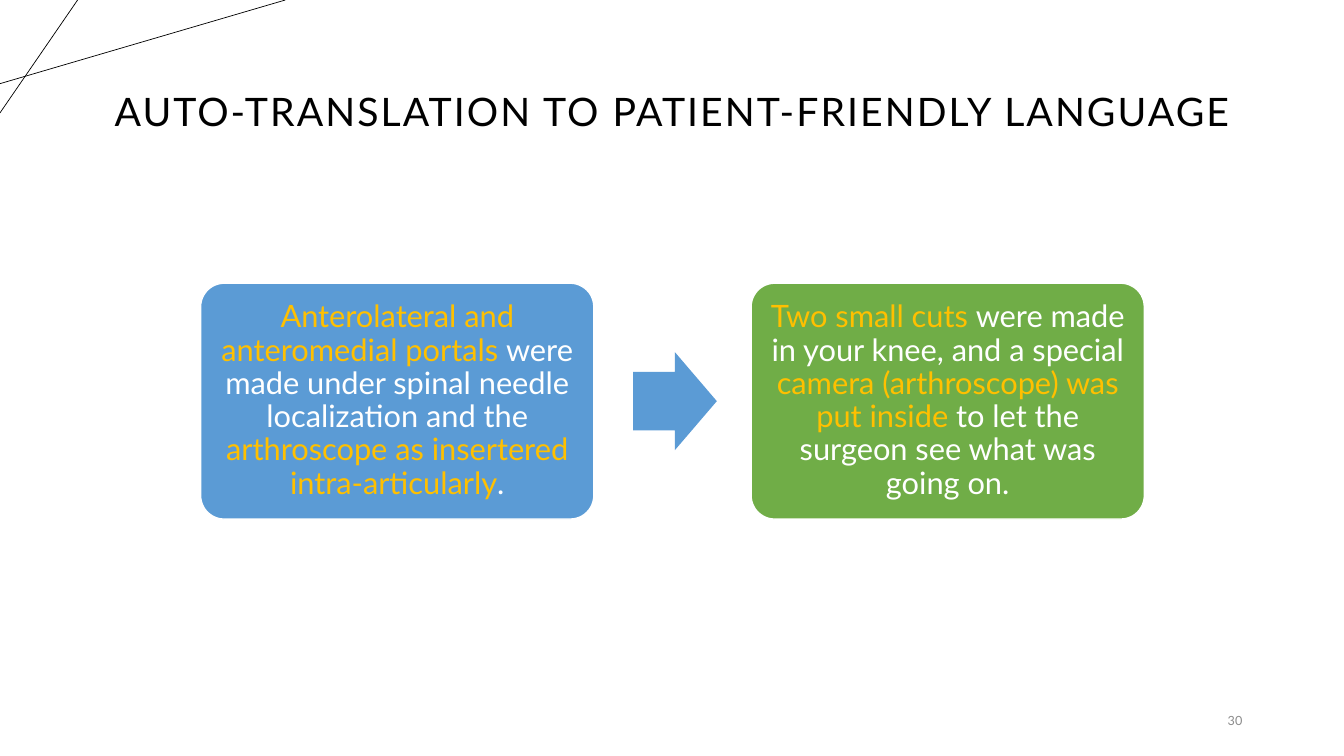
from lxml import etree
from pptx import Presentation
from pptx.dml.color import RGBColor
from pptx.enum.shapes import MSO_CONNECTOR, MSO_SHAPE
from pptx.enum.text import MSO_ANCHOR, PP_ALIGN
from pptx.oxml.ns import qn
from pptx.util import Inches, Pt

CENTER, RIGHT = PP_ALIGN.CENTER, PP_ALIGN.RIGHT
MIDDLE = MSO_ANCHOR.MIDDLE
ROUNDED, ARROW = MSO_SHAPE.ROUNDED_RECTANGLE, MSO_SHAPE.RIGHT_ARROW
STRAIGHT = MSO_CONNECTOR.STRAIGHT

BLACK, WHITE, GRAY = "000000", "FFFFFF", "8C8C8C"
BLUE, GREEN, GOLD = "5B9BD5", "70AD47", "FFC000"
FONT = "Lato"

TITLE = "AUTO-TRANSLATION TO PATIENT-FRIENDLY LANGUAGE"
SLIDE_NUMBER = "30"
CORNER_LINES = [((0, 0.83), (2.83, 0)), ((0.77, 0), (0, 1.12))]
CARDS = [
    (BLUE, [
        ("Anterolateral and anteromedial portals ", GOLD),
        ("were made under spinal needle localization and the ", WHITE),
        ("arthroscope as insertered intra-articularly", GOLD),
        (".", WHITE),
    ]),
    (GREEN, [
        ("Two small cuts ", GOLD),
        ("were made in your knee, and a special ", WHITE),
        ("camera (arthroscope) was put inside", GOLD),
        (" to let the surgeon see what was going on.", WHITE),
    ]),
]

CARD_LEFT, CARD_WIDTH, CARD_HEIGHT, CARD_STEP = 1.99, 3.9, 2.34, 5.46
ARROW_LEFT, ARROW_WIDTH, ARROW_HEIGHT = 6.28, 0.83, 0.97
ROW_MIDDLE = 3.98


def color(value):
    return RGBColor.from_string(value)


def set_all(target, values):
    for name, value in values.items():
        setattr(target, name, value)


def write(frame, spans, size, align, line_spacing=1.0, margins=(0.1, 0.05)):
    """Fill a text frame with one paragraph of coloured spans."""
    across, down = map(Inches, margins)
    set_all(frame, {"word_wrap": True, "vertical_anchor": MIDDLE,
                    "margin_left": across, "margin_right": across,
                    "margin_top": down, "margin_bottom": down})
    para = frame.paragraphs[0]
    set_all(para, {"alignment": align, "line_spacing": line_spacing})
    for text, text_color in spans:
        span = para.add_run()
        span.text = text
        set_all(span.font, {"name": FONT, "size": Pt(size)})
        span.font.color.rgb = color(text_color)
    return para


def add_block(slide, kind, left, width, height, fill, adjustments):
    """Add a flat filled shape centred on the row."""
    top = ROW_MIDDLE - height / 2
    block = slide.shapes.add_shape(
        kind, Inches(left), Inches(top), Inches(width), Inches(height))
    block.shadow.inherit = False
    block.fill.solid()
    block.fill.fore_color.rgb = color(fill)
    block.line.fill.background()
    for index, value in enumerate(adjustments):
        block.adjustments[index] = value
    return block


def main():
    deck = Presentation()
    set_all(deck, {"slide_width": Inches(13.33), "slide_height": Inches(7.5)})
    slide = deck.slides.add_slide(deck.slide_layouts[5])

    for start, end in CORNER_LINES:
        line = slide.shapes.add_connector(STRAIGHT, *map(Inches, start + end))
        line.line.color.rgb = color(BLACK)
        line.line.width = Pt(0.5)
        etree.SubElement(line._element.spPr, qn("a:effectLst"))

    title = slide.shapes.title
    set_all(title, {"left": Inches(0.92), "top": Inches(0.4),
                    "width": Inches(11.5), "height": Inches(1.45)})
    heading = write(title.text_frame, [(TITLE, BLACK)], 28, CENTER, 0.9)
    heading.runs[0].font._element.set("spc", "150")

    for index, (fill, spans) in enumerate(CARDS):
        card = add_block(slide, ROUNDED, CARD_LEFT + index * CARD_STEP,
                         CARD_WIDTH, CARD_HEIGHT, fill, [0.1])
        card.line.color.rgb = color(WHITE)
        card.line.width = Pt(1)
        write(card.text_frame, spans, 22, CENTER, 0.9, margins=(0.09, 0.09))
    add_block(slide, ARROW, ARROW_LEFT, ARROW_WIDTH, ARROW_HEIGHT, BLUE, [0.6, 0.5])

    number = slide.shapes.add_textbox(
        Inches(9.42), Inches(6.95), Inches(3), Inches(0.4))
    write(number.text_frame, [(SLIDE_NUMBER, GRAY)], 9, RIGHT)

    deck.save("out.pptx")


if __name__ == "__main__":
    main()
